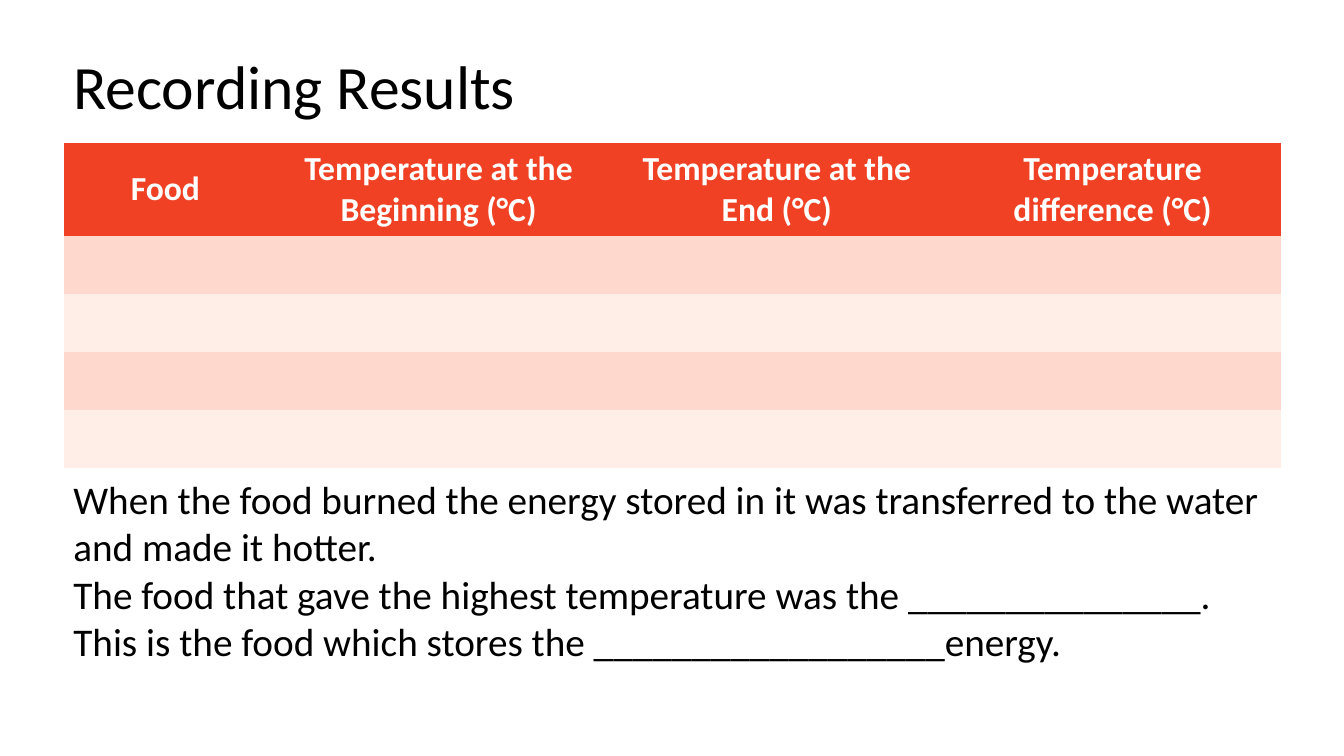
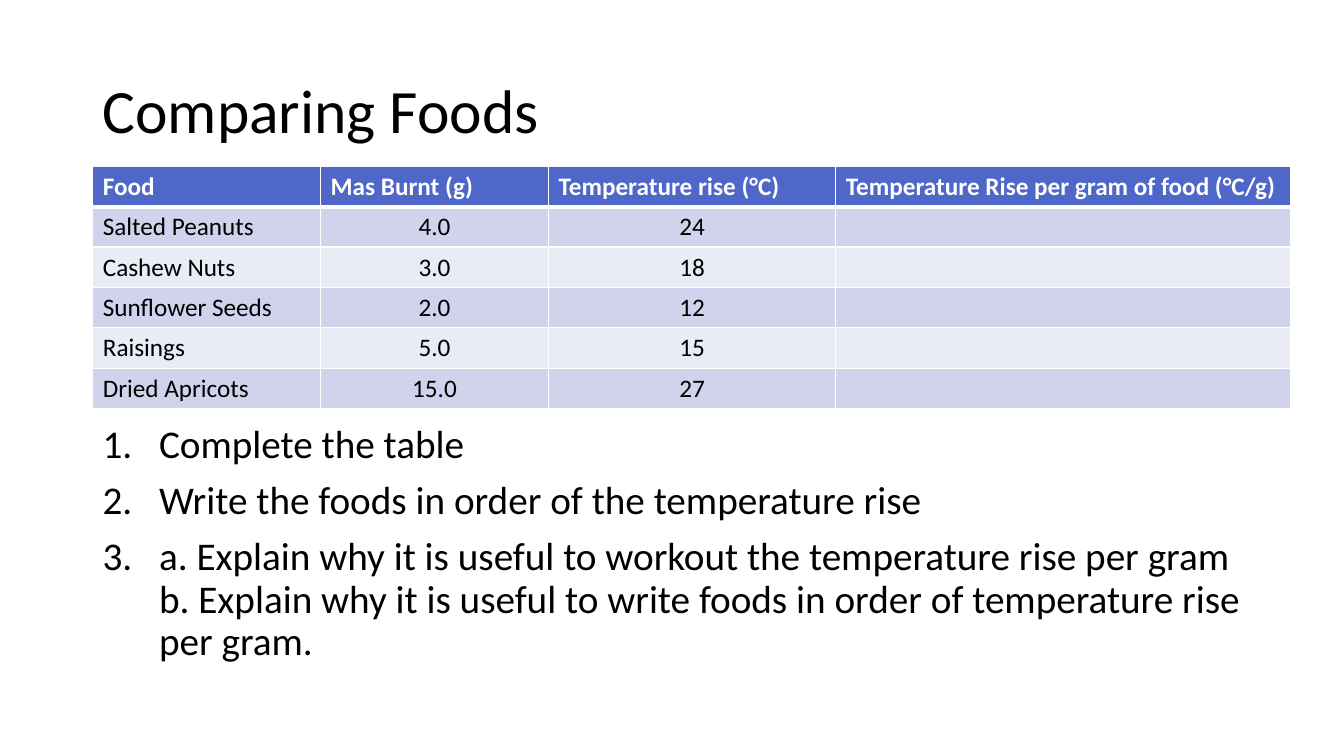
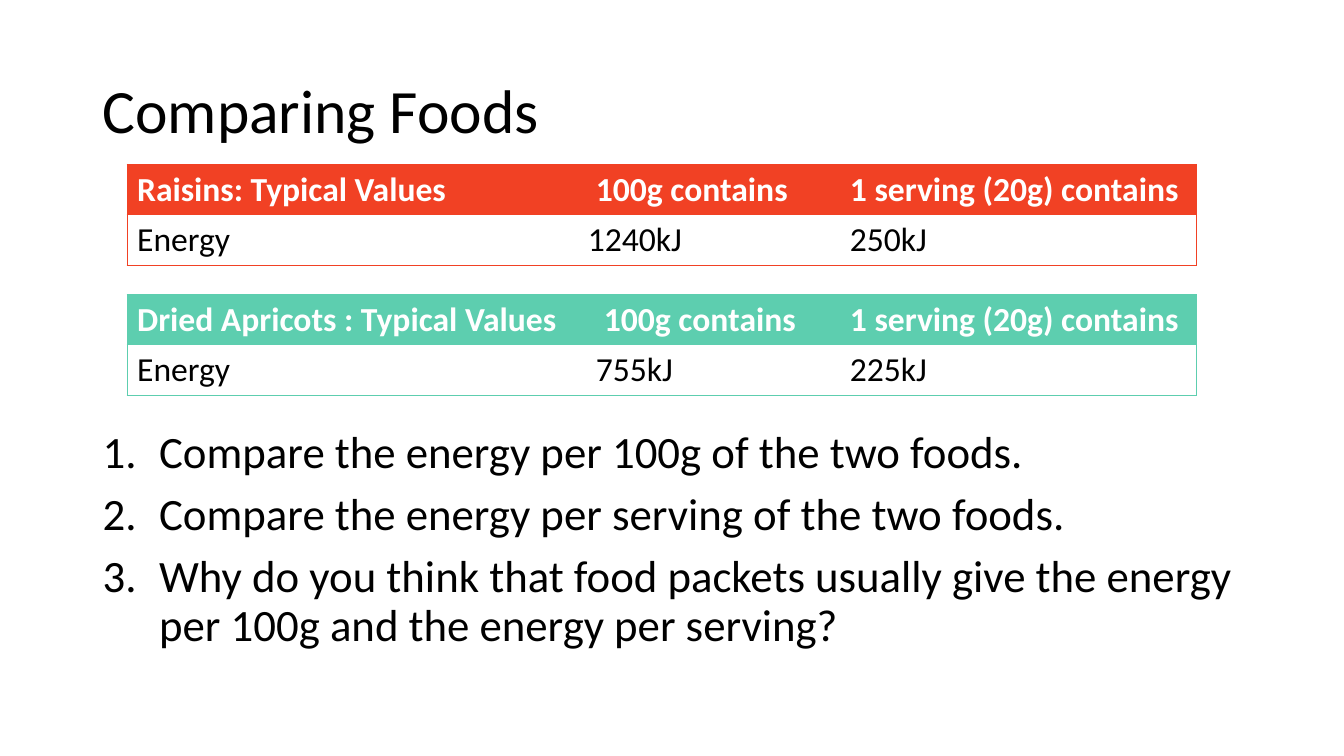
from dataclasses import dataclass

from lxml.etree import SubElement
from pptx import Presentation
from pptx.dml.color import RGBColor
from pptx.enum.text import MSO_ANCHOR, PP_ALIGN
from pptx.oxml.ns import qn
from pptx.slide import Slide
from pptx.table import Table, _Cell as Cell
from pptx.text.text import _Paragraph as Paragraph
from pptx.util import Inches, Pt

FONT = "Calibri"
COLOURS = {
    "text": "000000",
    "white": "FFFFFF",
    "red": "F14124",
    "red_band": "FFD8CD",
    "red_pale": "FFEDE8",
    "blue": "4E67C8",
    "blue_band": "D0D3EB",
    "blue_pale": "E9EBF5",
    "green": "5DCEAF",
}
NO_TABLE_STYLE = "{2D5ABB26-0587-4C30-8999-92F81FD0307C}"
NUMBER_INDENT = Inches(0.56)


@dataclass(frozen=True)
class Box:
    left: float
    top: float
    width: float
    height: float


@dataclass(frozen=True)
class TableDesign:
    size: int
    header: str
    bands: tuple[str, ...] = ()
    header_align: PP_ALIGN = PP_ALIGN.LEFT
    centred_columns: tuple[int, ...] = ()
    grid: str = ""
    outline: str = ""


RESULTS = TableDesign(24, "red", ("red_band", "red_pale"), header_align=PP_ALIGN.CENTER)
COMPARISON = TableDesign(
    18, "blue", ("blue_band", "blue_pale"), centred_columns=(1, 2), grid="white"
)
RAISINS = TableDesign(24, "red", outline="red")
APRICOTS = TableDesign(24, "green", outline="green")

TITLE_BOX = Box(0.92, 0.4, 11.5, 1.45)


def set_font(paragraph: Paragraph, size: int, colour: str = "text", bold: bool = False) -> None:
    font = paragraph.font
    font.name, font.size, font.bold = FONT, Pt(size), bold
    font.color.rgb = RGBColor.from_string(COLOURS[colour])


def add_text(
    slide: Slide,
    box: Box,
    lines: list[str],
    size: int,
    line_spacing: float = 1.0,
    anchor: MSO_ANCHOR = MSO_ANCHOR.TOP,
    numbered: bool = False,
) -> None:
    shape = slide.shapes.add_textbox(
        Inches(box.left), Inches(box.top), Inches(box.width), Inches(box.height)
    )
    frame = shape.text_frame
    frame.word_wrap = True
    frame.vertical_anchor = anchor
    for index, line in enumerate(lines):
        paragraph = frame.add_paragraph() if index else frame.paragraphs[0]
        paragraph.text = line
        if numbered:
            number_paragraph(paragraph)
        paragraph.line_spacing = line_spacing
        paragraph.space_before = Pt(10 if numbered and index else 0)
        set_font(paragraph, size)


def number_paragraph(paragraph: Paragraph) -> None:
    """Give the paragraph an automatic number and a hanging indent."""
    properties = paragraph._p.get_or_add_pPr()
    properties.set("marL", str(NUMBER_INDENT))
    properties.set("indent", str(-NUMBER_INDENT))
    SubElement(properties, qn("a:buFont"), typeface="+mj-lt")
    SubElement(properties, qn("a:buAutoNum"), type="arabicPeriod")


def add_title(slide: Slide, text: str, box: Box = TITLE_BOX) -> None:
    add_text(slide, box, [text], 44, 0.9, MSO_ANCHOR.MIDDLE)


def add_numbered_list(slide: Slide, box: Box, lines: list[str], size: int) -> None:
    add_text(slide, box, lines, size, 0.9, numbered=True)


def add_border(cell: Cell, side: str, colour: str, width: float) -> None:
    """Draw one side (L, R, T or B); sides come in that order, before the fill."""
    properties = cell._tc.get_or_add_tcPr()
    line = SubElement(properties, qn(f"a:ln{side}"), w=str(Pt(width)))
    fill = SubElement(line, qn("a:solidFill"))
    SubElement(fill, qn("a:srgbClr"), val=COLOURS[colour])


def add_borders(cell: Cell, design: TableDesign, row: int, first: bool, last: bool) -> None:
    if design.grid:
        widths = {"L": 1, "R": 1, "T": 3 if row == 1 else 1, "B": 1 if row else 3}
        for side, width in widths.items():
            add_border(cell, side, design.grid, width)
    elif design.outline:
        for side in ("L" if first else "") + ("R" if last else "") + "TB":
            add_border(cell, side, design.outline, 0.5)


def fill_cell(cell: Cell, design: TableDesign, row: int) -> None:
    if row and not design.bands:
        cell.fill.background()
        return
    colour = design.bands[(row - 1) % len(design.bands)] if row else design.header
    cell.fill.solid()
    cell.fill.fore_color.rgb = RGBColor.from_string(COLOURS[colour])


def add_table(
    slide: Slide,
    left: float,
    top: float,
    widths: list[float],
    heights: list[float],
    rows: list[list[str]],
    design: TableDesign,
) -> Table:
    graphic = slide.shapes.add_table(
        len(rows), len(widths), Inches(left), Inches(top),
        Inches(sum(widths)), Inches(sum(heights)),
    )
    for style in graphic.element.iter(qn("a:tableStyleId")):
        style.text = NO_TABLE_STYLE
    table = graphic.table
    for column, width in zip(table.columns, widths):
        column.width = Inches(width)
    for table_row, height in zip(table.rows, heights):
        table_row.height = Inches(height)
    for row, texts in enumerate(rows):
        for column, text in enumerate(texts):
            cell = table.cell(row, column)
            cell.vertical_anchor = MSO_ANCHOR.MIDDLE
            add_borders(cell, design, row, column == 0, column == len(widths) - 1)
            fill_cell(cell, design, row)
            if not text:
                continue
            paragraph = cell.text_frame.paragraphs[0]
            paragraph.text = text
            if row == 0:
                paragraph.alignment = design.header_align
                set_font(paragraph, design.size, "white", bold=True)
            else:
                centred = column in design.centred_columns
                paragraph.alignment = PP_ALIGN.CENTER if centred else PP_ALIGN.LEFT
                set_font(paragraph, design.size)
    return table


def build_recording_results(slide: Slide) -> None:
    add_title(slide, "Recording Results", Box(0.63, 0.35, 11.5, 1.07))
    headings = [
        "Food",
        "Temperature at the Beginning (°C)",
        "Temperature at the End (°C)",
        "Temperature difference (°C)",
    ]
    header_height, body_height, blank_rows = 0.92, 2.3, 4
    add_table(
        slide, 0.63, 1.42, [2.02, 3.4, 3.31, 3.35],
        [header_height] + [body_height / blank_rows] * blank_rows,
        [headings] + [[""] * len(headings)] * blank_rows,
        RESULTS,
    )
    conclusion = (
        "When the food burned the energy stored in it was transferred to the water "
        "and made it hotter.\n"
        "The food that gave the highest temperature was the _______________.\n"
        "This is the food which stores the __________________energy."
    )
    add_text(slide, Box(0.63, 4.67, 12.07, 1.99), [conclusion], 28)


def build_temperature_comparison(slide: Slide) -> None:
    add_title(slide, "Comparing Foods")
    rows = [
        ["Food", "Mas Burnt (g)", "Temperature rise (°C)",
         "Temperature Rise per gram of food (°C/g)"],
        ["Salted Peanuts", "4.0", "24", ""],
        ["Cashew Nuts", "3.0", "18", ""],
        ["Sunflower Seeds", "2.0", "12", ""],
        ["Raisings", "5.0", "15", ""],
        ["Dried Apricots", "15.0", "27", ""],
    ]
    add_table(
        slide, 0.92, 1.65, [2.26, 2.26, 2.85, 4.51], [0.4] * len(rows), rows, COMPARISON
    )
    tasks = [
        "Complete the table",
        "Write the foods in order of the temperature rise",
        "a. Explain why it is useful to workout the temperature rise per gram\n"
        "b. Explain why it is useful to write foods in order of temperature rise per gram.",
    ]
    add_numbered_list(slide, Box(0.92, 4.16, 11.5, 2.71), tasks, 28)


def build_energy_comparison(slide: Slide) -> None:
    add_title(slide, "Comparing Foods")
    foods = [
        ("Raisins: Typical Values", "1240kJ", "250kJ", 1.63, 4.47, RAISINS),
        ("Dried Apricots : Typical Values", "755kJ", "225kJ", 2.92, 4.55, APRICOTS),
    ]
    for heading, per_100g, per_serving, top, name_width, design in foods:
        rows = [
            [heading, "100g contains", "1 serving (20g) contains"],
            ["Energy", per_100g, per_serving],
        ]
        widths = [name_width, 7.07 - name_width, 3.54]
        table = add_table(slide, 1.26, top, widths, [0.5, 0.5], rows, design)
        table.cell(0, 1).margin_left = Inches(0.18)
    questions = [
        "Compare the energy per 100g of the two foods.",
        "Compare the energy per serving of the two foods.",
        "Why do you think that food packets usually give the energy per 100g "
        "and the energy per serving?",
    ]
    add_numbered_list(slide, Box(0.92, 4.21, 11.5, 2.54), questions, 32)


def main() -> None:
    presentation = Presentation()
    presentation.slide_width = Inches(13.33)
    presentation.slide_height = Inches(7.5)
    blank_layout = presentation.slide_layouts[6]
    for build in (
        build_recording_results,
        build_temperature_comparison,
        build_energy_comparison,
    ):
        build(presentation.slides.add_slide(blank_layout))
    presentation.save("out.pptx")


if __name__ == "__main__":
    main()
